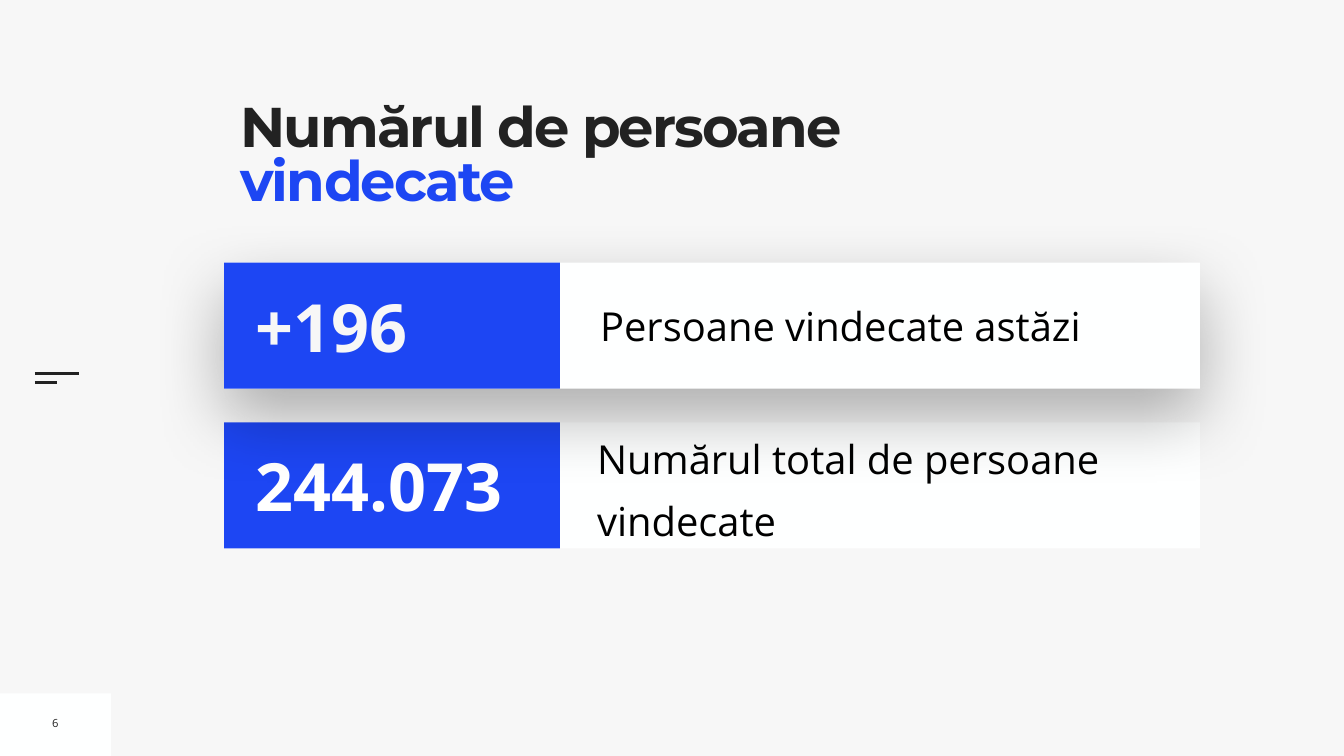
import dataclasses

import pptx
import pptx.dml.color
import pptx.enum.shapes
import pptx.enum.text
import pptx.oxml
import pptx.oxml.ns
import pptx.util

SCALE = 9144  # EMU in one px, 100 px to the inch
ANCHOR = pptx.enum.text.MSO_ANCHOR
ALIGN = pptx.enum.text.PP_ALIGN
FIT = pptx.enum.text.MSO_AUTO_SIZE


@dataclasses.dataclass(frozen=True)
class Theme:
    back: str = "F7F7F7"
    panel: str = "FEFFFF"
    white: str = "FFFFFF"
    dark: str = "222222"
    black: str = "000000"
    blue: str = "1D46F3"
    head: str = "Montserrat"
    body: str = "Open Sans"
    title: int = 80
    figure: int = 95
    label: int = 57
    page: int = 16


def px(*sizes):
    return [pptx.util.Emu(size * SCALE) for size in sizes]


def rgb(code):
    return pptx.dml.color.RGBColor.from_string(code)


def paint(fill, color):
    fill.solid()
    fill.fore_color.rgb = rgb(color)


def write(frame, text, font, size, color, bold=False, track=0,
          align=ALIGN.LEFT, lead=None, before=None):
    """Add a run to the first paragraph of the frame."""
    para = frame.paragraphs[0]
    para.alignment = align
    if lead:
        para.line_spacing = lead
    if before:
        para.space_before = pptx.util.Pt(before)
    run = para.add_run()
    run.text = text
    run.font.name = font
    run.font.size = pptx.util.Pt(size)
    run.font.bold = bold
    run.font.color.rgb = rgb(color)
    if track:
        run.font._element.set("spc", str(round(track * 100)))


class Deck:
    def __init__(self, theme, width, height):
        self.theme = theme
        self.file = pptx.Presentation()
        self.file.slide_width, self.file.slide_height = px(width, height)
        self.slide = self.file.slides.add_slide(self.file.slide_layouts[5])
        paint(self.slide.background.fill, theme.back)

    def frame(self, shape, inset, anchor, fit, wrap=True):
        """Set the text area of a shape and return it."""
        area = shape.text_frame
        area.margin_left = area.margin_right = px(inset)[0]
        area.margin_top = area.margin_bottom = px(inset)[0]
        area.vertical_anchor = anchor
        area.auto_size = fit
        area.word_wrap = wrap
        return area

    def title(self, box, parts):
        shape = self.slide.shapes.title
        shape.left, shape.top, shape.width, shape.height = px(*box)
        paint(shape.fill, self.theme.back)
        area = self.frame(shape, 0, ANCHOR.TOP, FIT.NONE)
        for text, color in parts:
            write(area, text, self.theme.head, self.theme.title, color,
                  bold=True, track=-2.7, lead=0.8)

    def rect(self, home, box, color, shade=False):
        kind = pptx.enum.shapes.MSO_SHAPE.RECTANGLE
        shape = home.add_shape(kind, *px(*box))
        paint(shape.fill, color)
        shape.line.fill.background()
        shape.shadow.inherit = False
        if shade:
            ns = pptx.oxml.ns
            drop = pptx.oxml.parse_xml(
                f'<a:outerShdw {ns.nsdecls("a")} blurRad="1270000" '
                'dist="508000" dir="5400000" rotWithShape="0">'
                f'<a:srgbClr val="{self.theme.black}">'
                '<a:alpha val="30000"/></a:srgbClr></a:outerShdw>')
            shape._element.spPr.find(ns.qn("a:effectLst")).append(drop)

    def line(self, left, right, top):
        kind = pptx.enum.shapes.MSO_CONNECTOR.STRAIGHT
        rule = self.slide.shapes.add_connector(kind, *px(left, top, right, top))
        rule.line.color.rgb = rgb(self.theme.dark)
        rule.line.width = pptx.util.Pt(3)
        pptx.oxml.ns.qn("a:effectLst")
        rule._element.spPr.append(pptx.oxml.parse_xml(
            f'<a:effectLst {pptx.oxml.ns.nsdecls("a")}/>'))

    def text(self, home, box, text, size, color, inset=10, wrap=True, **style):
        shape = home.add_textbox(*px(*box))
        area = self.frame(shape, inset, ANCHOR.MIDDLE, FIT.SHAPE_TO_FIT_TEXT,
                          wrap)
        write(area, text, self.theme.body, size, color, **style)

    def row(self, top, figure, tint, label, box, shade=False, **style):
        """Draw a blue figure beside its label on a light panel."""
        theme = self.theme
        home = self.slide.shapes.add_group_shape().shapes
        self.rect(home, (445, top, 1936, 250), theme.panel, shade)
        self.text(home, box, label, theme.label, theme.black, **style)
        self.rect(home, (445, top, 666, 250), theme.blue)
        self.text(home, (498, top + 35, 603, 180), figure, theme.figure, tint,
                  bold=True)


def main():
    theme = Theme()
    deck = Deck(theme, 2667, 1500)
    shapes = deck.slide.shapes
    deck.rect(shapes, (0, 1376, 220, 124), theme.panel)
    deck.line(69, 157, 741)
    deck.line(69, 113, 759)
    deck.title((477, 207, 1301, 273), [("Numărul de persoane ", theme.dark),
                                       ("vindecate", theme.blue)])
    deck.text(shapes, (93, 1409, 34, 51), "6", theme.page, theme.dark,
              wrap=False, align=ALIGN.CENTER)
    deck.row(838, "244.073", theme.white, "Numărul total de persoane vindecate",
             (1185, 839, 1195, 236), inset=0, lead=1.3, before=20)
    deck.row(521, "+196", theme.back, "Persoane vindecate astăzi",
             (1181, 587, 1176, 116), shade=True)
    deck.file.save("out.pptx")


if __name__ == "__main__":
    main()
